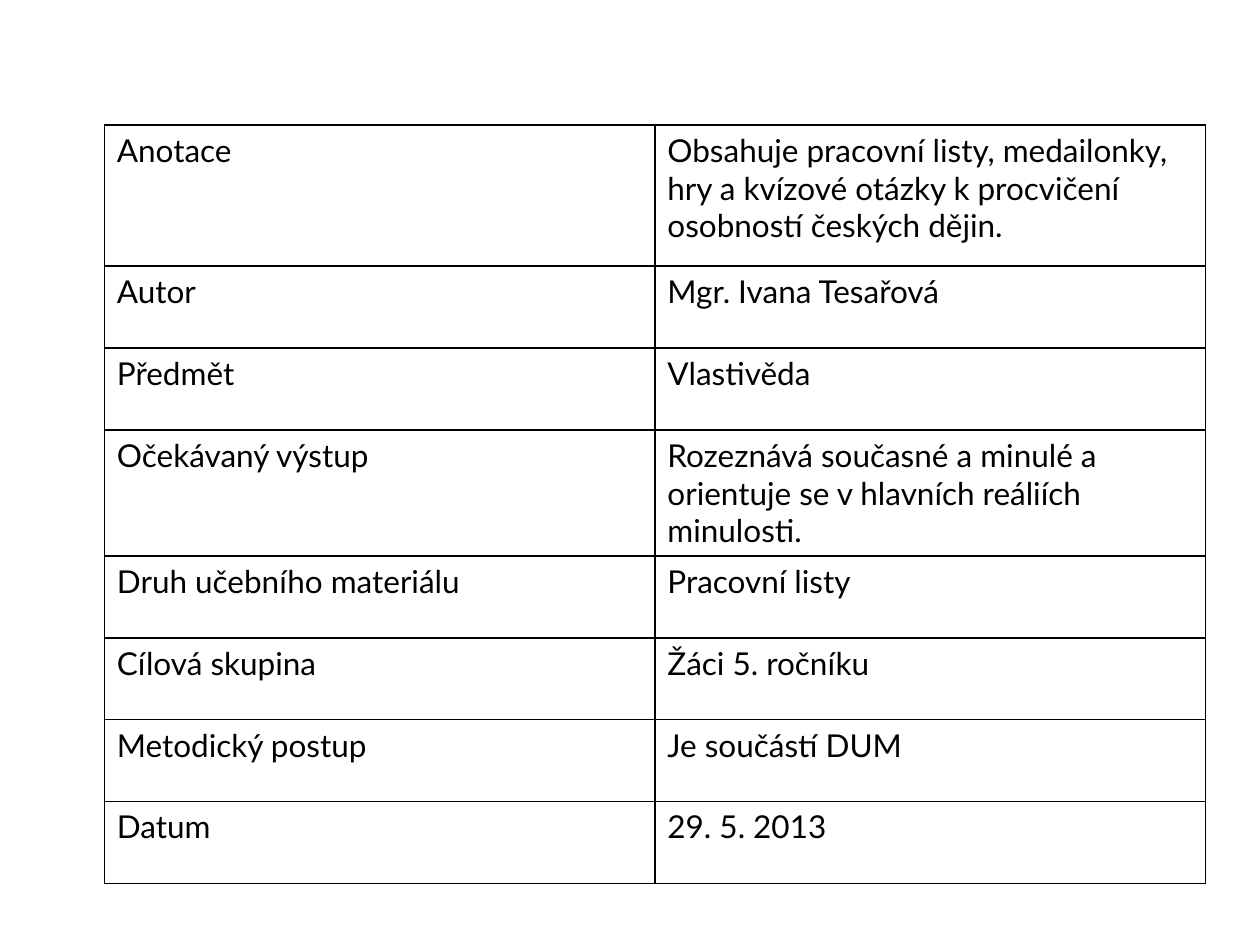
import pptx
import pptx.dml.color
import pptx.oxml
import pptx.oxml.ns
import pptx.util
from pptx.util import Pt

BLACK = pptx.dml.color.RGBColor(0, 0, 0)
FONT_NAME = "Lato"
BORDER_WIDTH = Pt(1)
ROW_HEIGHT = Pt(46.8)
TALL_ROW_HEIGHTS = {"Anotace": Pt(80.64), "Očekávaný výstup": Pt(72)}

DETAILS = [
    ("Anotace", "Obsahuje pracovní listy, medailonky, hry a kvízové otázky "
                "k procvičení osobností českých dějin."),
    ("Autor", "Mgr. Ivana Tesařová"),
    ("Předmět", "Vlastivěda"),
    ("Očekávaný výstup", "Rozeznává současné a minulé a orientuje se "
                         "v hlavních reáliích minulosti."),
    ("Druh učebního materiálu", "Pracovní listy"),
    ("Cílová skupina", "Žáci 5. ročníku"),
    ("Metodický postup", "Je součástí DUM"),
    ("Datum", "29. 5. 2013"),
]


def add_borders(cell):
    properties = cell._tc.get_or_add_tcPr()
    for position, side in enumerate(("lnL", "lnR", "lnT", "lnB")):
        border = pptx.oxml.parse_xml(
            f'<a:{side} {pptx.oxml.ns.nsdecls("a")} w="{BORDER_WIDTH}">'
            f'<a:solidFill><a:srgbClr val="{BLACK}"/></a:solidFill></a:{side}>'
        )
        properties.insert(position, border)


def format_cell(cell, text):
    cell.text = text
    cell.fill.background()
    font = cell.text_frame.paragraphs[0].font
    font.name = FONT_NAME
    font.size = Pt(18)
    font.bold = False
    font.color.rgb = BLACK
    add_borders(cell)


def add_details_table(slide, left, top, width):
    heights = [TALL_ROW_HEIGHTS.get(label, ROW_HEIGHT) for label, _ in DETAILS]
    frame = slide.shapes.add_table(len(DETAILS), 2, left, top, width, sum(heights))
    table = frame.table
    table.first_row = False
    table.horz_banding = False
    for row, height, texts in zip(table.rows, heights, DETAILS):
        row.height = height
        for cell, text in zip(row.cells, texts):
            format_cell(cell, text)


def main():
    presentation = pptx.Presentation()
    presentation.slide_width = Pt(720)
    presentation.slide_height = Pt(540)
    slide = presentation.slides.add_slide(presentation.slide_layouts[6])
    add_details_table(slide, Pt(59.6), Pt(71.4), Pt(629.2))
    presentation.save("out.pptx")


if __name__ == "__main__":
    main()
